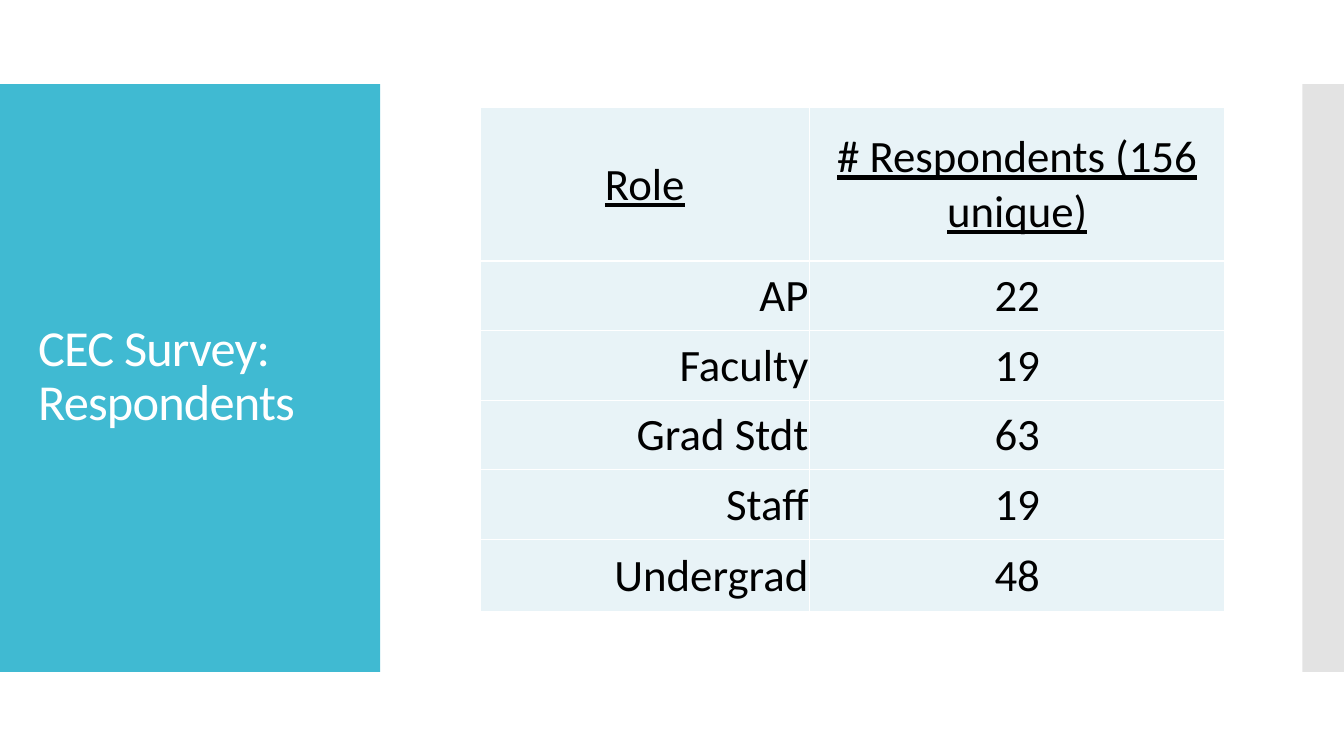
from typing import NamedTuple

from lxml.etree import SubElement
from pptx import Presentation
from pptx.dml.color import RGBColor
from pptx.enum.shapes import MSO_SHAPE
from pptx.enum.text import MSO_ANCHOR, PP_ALIGN
from pptx.oxml.ns import qn
from pptx.slide import Slide
from pptx.table import _Cell
from pptx.text.text import TextFrame
from pptx.util import Inches, Pt

COLORS = {
    "teal": "40BAD2",
    "gray": "C8C8C8",
    "cell": "E8F3F7",
    "white": "FFFFFF",
    "black": "000000",
}
FONT = "Calibri"
SLIDE_WIDTH, SLIDE_HEIGHT = Inches(13.33), Inches(7.5)
BAND_TOP, BAND_HEIGHT = SLIDE_HEIGHT / 9, SLIDE_HEIGHT * 7 / 9


class Band(NamedTuple):
    left: float  # share of the slide's width
    width: float  # share of the slide's width
    color: str
    opacity: int  # percent


class RoleCount(NamedTuple):
    role: str
    respondents: str


BANDS = [Band(0, 0.2828, "teal", 100), Band(0.969, 0.031, "gray", 50)]
COUNTS = [
    RoleCount("Role", "# Respondents (156 unique)"),
    RoleCount("AP", "22"),
    RoleCount("Faculty", "19"),
    RoleCount("Grad Stdt", "63"),
    RoleCount("Staff", "19"),
    RoleCount("Undergrad", "48"),
]
COLUMN_WIDTHS = [3.27, 4.12]
ROW_HEIGHTS = [1.52] + [0.69] * 4 + [0.72]


def rgb(color: str) -> RGBColor:
    return RGBColor.from_string(COLORS[color])


def write(frame: TextFrame, text: str, *, size: float, color: str,
          align: PP_ALIGN = PP_ALIGN.LEFT, underline: bool = False,
          spacing: float = 0, line_spacing: float = 1) -> None:
    """Fill the frame's first paragraph; spacing is between letters, in points."""
    paragraph = frame.paragraphs[0]
    paragraph.alignment = align
    paragraph.line_spacing = line_spacing
    for index, line in enumerate(text.splitlines()):
        if index:
            paragraph.add_line_break()
        run = paragraph.add_run()
        run.text = line
        run.font.name = FONT
        run.font.size = Pt(size)
        run.font.underline = underline
        run.font.color.rgb = rgb(color)
        if spacing:
            run.font._element.set("spc", str(round(spacing * 100)))


def draw_band(slide: Slide, band: Band) -> None:
    shape = slide.shapes.add_shape(
        MSO_SHAPE.RECTANGLE, round(band.left * SLIDE_WIDTH), round(BAND_TOP),
        round(band.width * SLIDE_WIDTH), round(BAND_HEIGHT))
    shape.shadow.inherit = False
    shape.line.fill.background()
    shape.fill.solid()
    shape.fill.fore_color.rgb = rgb(band.color)
    if band.opacity < 100:
        fill_color = shape._element.spPr.find(".//" + qn("a:srgbClr"))
        SubElement(fill_color, qn("a:alpha"), val=str(band.opacity * 1000))


def draw_title(slide: Slide) -> None:
    box = slide.shapes.add_textbox(
        Inches(0.28), Inches(1.23), Inches(3.22), Inches(5.03))
    frame = box.text_frame
    frame.word_wrap = True
    frame.vertical_anchor = MSO_ANCHOR.MIDDLE
    write(frame, "CEC Survey:\nRespondents", size=36, color="white",
          spacing=-0.6, line_spacing=0.9)


def style_cell(cell: _Cell) -> None:
    """Set margins, borders and fill; borders come before the fill in the XML."""
    cell.vertical_anchor = MSO_ANCHOR.MIDDLE
    cell.margin_left = cell.margin_right = cell.margin_top = Inches(0.01)
    cell.margin_bottom = 0
    properties = cell._tc.get_or_add_tcPr()
    for side in ("a:lnL", "a:lnR", "a:lnT", "a:lnB"):
        border = SubElement(properties, qn(side), w=str(Pt(1)))
        border_fill = SubElement(border, qn("a:solidFill"))
        SubElement(border_fill, qn("a:srgbClr"), val=COLORS["white"])
    cell.fill.solid()
    cell.fill.fore_color.rgb = rgb("cell")


def draw_respondents(slide: Slide) -> None:
    table = slide.shapes.add_table(
        len(COUNTS), len(COLUMN_WIDTHS), Inches(4.76), Inches(1.07),
        Inches(sum(COLUMN_WIDTHS)), Inches(sum(ROW_HEIGHTS))).table
    for column, width in zip(table.columns, COLUMN_WIDTHS):
        column.width = Inches(width)
    for row, height in zip(table.rows, ROW_HEIGHTS):
        row.height = Inches(height)
    for row_index, count in enumerate(COUNTS):
        is_header = row_index == 0
        for column_index, text in enumerate(count):
            cell = table.cell(row_index, column_index)
            style_cell(cell)
            is_role = column_index == 0 and not is_header
            write(cell.text_frame, text, size=32, color="black",
                  align=PP_ALIGN.RIGHT if is_role else PP_ALIGN.CENTER,
                  underline=is_header)


def main() -> None:
    presentation = Presentation()
    presentation.slide_width = SLIDE_WIDTH
    presentation.slide_height = SLIDE_HEIGHT
    slide = presentation.slides.add_slide(presentation.slide_layouts[6])
    for band in BANDS:
        draw_band(slide, band)
    draw_title(slide)
    draw_respondents(slide)
    presentation.save("out.pptx")


if __name__ == "__main__":
    main()
